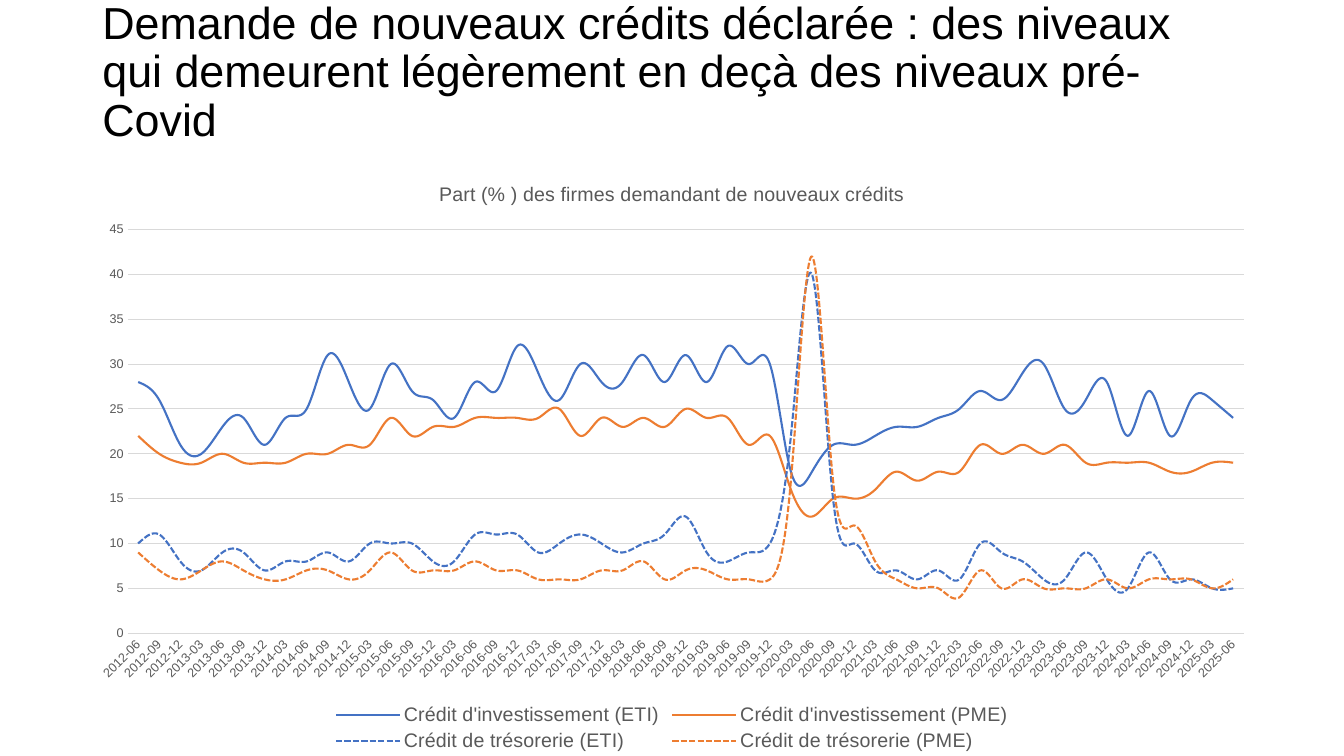
from lxml import etree
from pptx import Presentation
from pptx import util as u
from pptx.chart import data as chart_data
from pptx.dml import color
from pptx.enum import chart as ce, dml, text
from pptx.oxml import ns

COLORS = {"ink": "000000", "grey": "595959", "grid": "D9D9D9",
          "ETI": "4472C4", "PME": "ED7D31"}
COLUMNS, ROWS = 160, 90
QUARTERS = [f"{month // 12}-{month % 12 + 1:02d}"
            for month in range(2012 * 12 + 5, 2025 * 12 + 6, 3)]
CREDITS = [
    ("Crédit d'investissement", "ETI", dml.MSO_LINE.SOLID,
     [28, 26, 21, 20, 23, 24, 21, 24, 25, 31, 28, 25, 30, 27, 26, 24, 28, 27,
      32, 29, 26, 30, 28, 28, 31, 28, 31, 28, 32, 30, 30, 18, 18, 21, 21, 22,
      23, 23, 24, 25, 27, 26, 29, 30, 25, 26, 28, 22, 27, 22, 26, 26, 24]),
    ("Crédit d'investissement", "PME", dml.MSO_LINE.SOLID,
     [22, 20, 19, 19, 20, 19, 19, 19, 20, 20, 21, 21, 24, 22, 23, 23, 24, 24,
      24, 24, 25, 22, 24, 23, 24, 23, 25, 24, 24, 21, 22, 16, 13, 15, 15, 16,
      18, 17, 18, 18, 21, 20, 21, 20, 21, 19, 19, 19, 19, 18, 18, 19, 19]),
    ("Crédit de trésorerie", "ETI", dml.MSO_LINE.SQUARE_DOT,
     [10, 11, 8, 7, 9, 9, 7, 8, 8, 9, 8, 10, 10, 10, 8, 8, 11, 11,
      11, 9, 10, 11, 10, 9, 10, 11, 13, 9, 8, 9, 10, 22, 40, 15, 10, 7,
      7, 6, 7, 6, 10, 9, 8, 6, 6, 9, 6, 5, 9, 6, 6, 5, 5]),
    ("Crédit de trésorerie", "PME", dml.MSO_LINE.SQUARE_DOT,
     [9, 7, 6, 7, 8, 7, 6, 6, 7, 7, 6, 7, 9, 7, 7, 7, 8, 7,
      7, 6, 6, 6, 7, 7, 8, 6, 7, 7, 6, 6, 6, 17, 42, 17, 12, 8,
      6, 5, 5, 4, 7, 5, 6, 5, 5, 5, 6, 5, 6, 6, 6, 5, 6]),
]


class SlideBuilder:
    font_name = "Arial"

    def __init__(self, deck):
        self.page = deck.slides.add_slide(deck.slide_layouts[6])
        self.column = deck.slide_width / COLUMNS
        self.row = deck.slide_height / ROWS

    def place(self, left, top, width, height):
        return (round(left * self.column), round(top * self.row),
                round(width * self.column), round(height * self.row))

    def apply(self, target, formats):
        for name, value in formats.items():
            setattr(target, name, value)

    def style_font(self, font, size, ink):
        self.apply(font, {"name": self.font_name, "size": u.Pt(size), "bold": False})
        font.color.rgb = color.RGBColor.from_string(COLORS[ink])

    def style_line(self, line, width, ink, dash=dml.MSO_LINE.SOLID):
        line.color.rgb = color.RGBColor.from_string(COLORS[ink])
        self.apply(line, {"width": u.Pt(width), "dash_style": dash})

    def title(self, words, area):
        box = self.page.shapes.add_textbox(*self.place(*area))
        self.apply(box.text_frame, {"word_wrap": True,
                                    "vertical_anchor": text.MSO_ANCHOR.MIDDLE})
        para = box.text_frame.paragraphs[0]
        para.line_spacing = 0.9
        span = para.add_run()
        span.text = words
        self.style_font(span.font, 32, "ink")

    def line_chart(self, heading, quarters, credits, area, plot_shares):
        data = chart_data.CategoryChartData(number_format="0")
        data.categories = quarters
        for kind, firm, dash, values in credits:
            data.add_series(f"{kind} ({firm})", values)
        chart = self.page.shapes.add_chart(
            ce.XL_CHART_TYPE.LINE, *self.place(*area), data).chart
        self.style_font(chart.font, 10, "ink")
        self.apply(chart, {"has_title": True, "has_legend": True})
        span = chart.chart_title.text_frame.paragraphs[0].add_run()
        span.text = heading
        self.style_font(span.font, 14, "grey")
        self.apply(chart.legend, {"position": ce.XL_LEGEND_POSITION.BOTTOM,
                                  "include_in_layout": False})
        self.style_font(chart.legend.font, 14, "grey")
        chart.plots[0].vary_by_categories = False
        for series, (kind, firm, dash, values) in zip(chart.plots[0].series, credits):
            series.smooth = True
            series.marker.style = ce.XL_MARKER_STYLE.NONE
            self.style_line(series.format.line, 1.5, firm, dash)
        self.axes(chart)
        self.plot_layout(chart, plot_shares)

    def axes(self, chart):
        for axis in (chart.category_axis, chart.value_axis):
            self.apply(axis, {"major_tick_mark": ce.XL_TICK_MARK.NONE,
                              "minor_tick_mark": ce.XL_TICK_MARK.NONE})
            self.style_font(axis.tick_labels.font, 9, "grey")
        self.style_line(chart.category_axis.format.line, 0.75, "grid")
        labels = chart.category_axis._element.find(ns.qn("c:txPr"))
        labels.find(ns.qn("a:bodyPr")).set("rot", "-2700000")
        self.apply(chart.value_axis, {"minimum_scale": 0, "maximum_scale": 45,
                                      "major_unit": 5, "has_major_gridlines": True})
        chart.value_axis.format.line.fill.background()
        self.style_line(chart.value_axis.major_gridlines.format.line, 0.75, "grid")

    def plot_layout(self, chart, shares):
        plot_area = chart._chartSpace.find(".//" + ns.qn("c:plotArea"))
        for old in plot_area.findall(ns.qn("c:layout")):
            plot_area.remove(old)
        layout = etree.Element(ns.qn("c:layout"))
        manual = etree.SubElement(layout, ns.qn("c:manualLayout"))
        settings = {"layoutTarget": "inner", "xMode": "edge", "yMode": "edge", **shares}
        for name, value in settings.items():
            etree.SubElement(manual, ns.qn(f"c:{name}")).set("val", str(value))
        plot_area.insert(0, layout)


def main():
    deck = Presentation()
    deck.slide_width, deck.slide_height = u.Inches(13.33), u.Inches(7.5)
    builder = SlideBuilder(deck)
    builder.title("Demande de nouveaux crédits déclarée : des niveaux qui demeurent "
                  "légèrement en deçà des niveaux pré-Covid", (11, 0, 138, 17.4))
    builder.line_chart("Part (% ) des firmes demandant de nouveaux crédits",
                       QUARTERS, CREDITS, (9.1, 19.1, 141.8, 70.9),
                       {"x": 0.043, "y": 0.116, "w": 0.937, "h": 0.678})
    deck.save("out.pptx")


if __name__ == "__main__":
    main()
